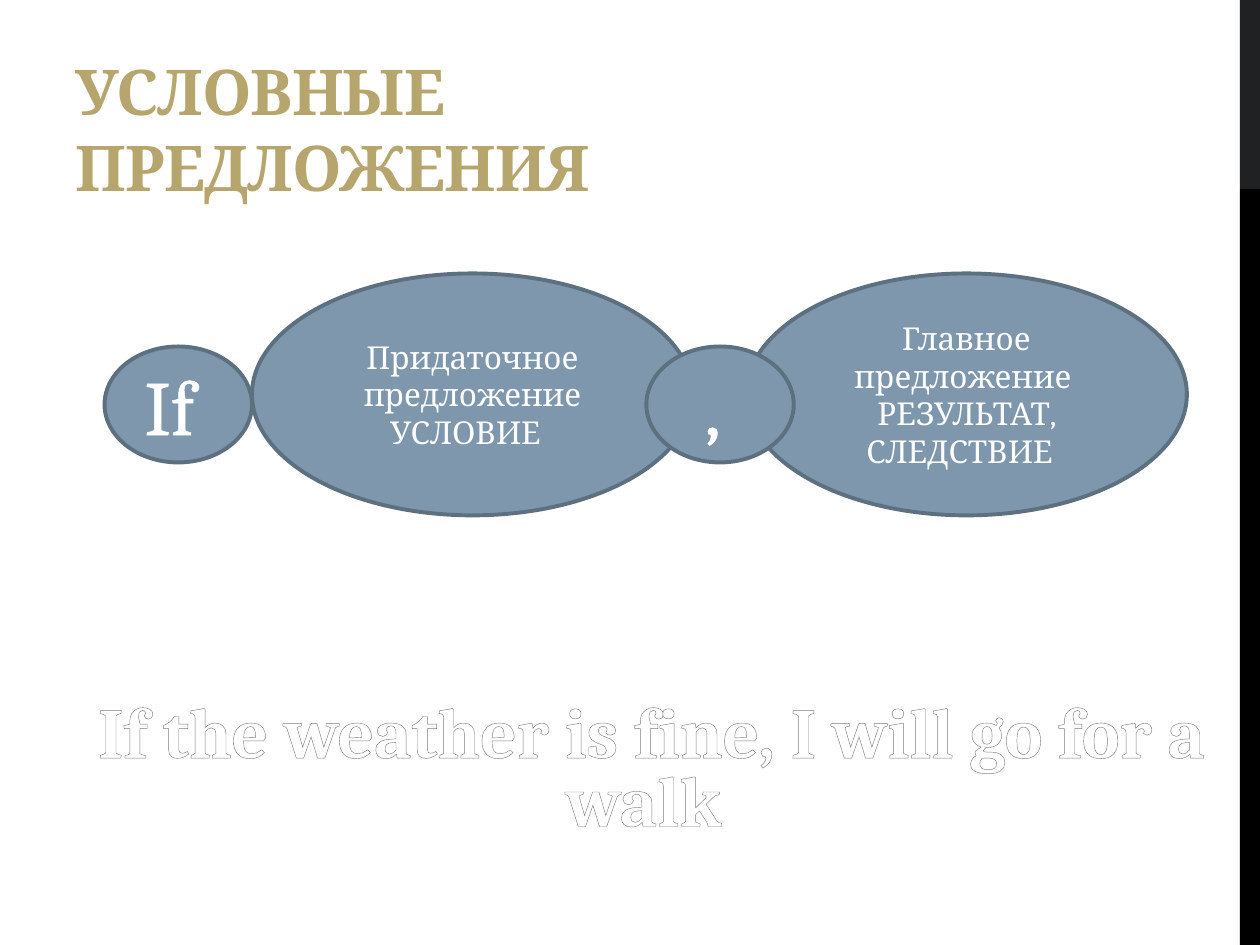
import pptx
import pptx.dml.color
import pptx.enum.shapes
import pptx.enum.text
import pptx.oxml
import pptx.oxml.ns
import pptx.util
from pptx.util import Inches

RGBColor = pptx.dml.color.RGBColor
Align = pptx.enum.text.PP_ALIGN
Anchor = pptx.enum.text.MSO_ANCHOR
Shape = pptx.enum.shapes.MSO_SHAPE

WHITE = RGBColor(0xFF, 0xFF, 0xFF)
BLACK = RGBColor(0x00, 0x00, 0x00)
CHARCOAL = RGBColor(0x1F, 0x21, 0x23)
BLUE = RGBColor(0x7E, 0x97, 0xAD)
DARK_BLUE = RGBColor(0x5D, 0x70, 0x80)
GRAY = RGBColor(0x7F, 0x7F, 0x7F)
OUTLINE_GRAY = RGBColor(0x7D, 0x7D, 0x7D)
GOLD_STOPS = [
    (0, RGBColor(0x59, 0x4F, 0x2C)),
    (78, RGBColor(0xB6, 0xA5, 0x6D)),
    (100, RGBColor(0xF8, 0xF6, 0xF1)),
]
SILVER_STOPS = [(0, WHITE), (9, WHITE), (50, GRAY), (79, WHITE), (100, WHITE)]


class SlideBuilder:
    font = "Cambria"

    def __init__(self, slide):
        self.s = slide

    def bar(self, top, height, color):
        sp = self.s.shapes.add_shape(
            Shape.RECTANGLE, Inches(9.84), Inches(top), Inches(0.16), Inches(height)
        )
        sp.shadow.inherit = False
        sp.fill.solid()
        sp.fill.fore_color.rgb = color
        sp.line.fill.background()

    def ellipse(self, left, top, width, height, lines, size, outline=None):
        sp = self.s.shapes.add_shape(
            Shape.OVAL, Inches(left), Inches(top), Inches(width), Inches(height)
        )
        sp.shadow.inherit = False
        sp.fill.solid()
        sp.fill.fore_color.rgb = BLUE
        sp.line.color.rgb = DARK_BLUE
        sp.line.width = pptx.util.Pt(2.25)
        tf = sp.text_frame
        tf.word_wrap = True
        tf.vertical_anchor = Anchor.MIDDLE
        for i, line in enumerate(lines):
            p = tf.add_paragraph() if i else tf.paragraphs[0]
            p.alignment = Align.CENTER
            r = self.run(p, line, size)
            r.font.color.rgb = WHITE
            if outline:
                self.outline(r, *outline)

    def heading(self, left, top, width, height, text, size, stops, anchor, align):
        sp = self.s.shapes.add_textbox(
            Inches(left), Inches(top), Inches(width), Inches(height)
        )
        tf = sp.text_frame
        tf.word_wrap = True
        tf.vertical_anchor = anchor
        p = tf.paragraphs[0]
        p.alignment = align
        r = self.run(p, text, size)
        r.font.bold = True
        self.gradient(r, stops)
        return p, r

    def run(self, p, text, size):
        r = p.add_run()
        r.text = text
        r.font.name = self.font
        r.font.size = pptx.util.Pt(size)
        return r

    def gradient(self, r, stops):
        gs = "".join(
            f'<a:gs pos="{pos * 1000}"><a:srgbClr val="{color}"/></a:gs>'
            for pos, color in stops
        )
        self.insert(
            r,
            f'<a:gradFill {pptx.oxml.ns.nsdecls("a")}><a:gsLst>{gs}</a:gsLst>'
            '<a:lin ang="5400000" scaled="0"/></a:gradFill>',
        )

    def outline(self, r, color, width):
        self.insert(
            r,
            f'<a:ln {pptx.oxml.ns.nsdecls("a")} w="{pptx.util.Pt(width)}">'
            f'<a:solidFill><a:srgbClr val="{color}"/></a:solidFill></a:ln>',
        )

    def insert(self, r, xml):
        r.font._element.insert(0, pptx.oxml.parse_xml(xml))


def main():
    prs = pptx.Presentation()
    prs.slide_width = Inches(10)
    prs.slide_height = Inches(7.5)
    sb = SlideBuilder(prs.slides.add_slide(prs.slide_layouts[6]))

    sb.bar(0, 1.5, CHARCOAL)
    sb.bar(1.5, 6, BLACK)

    p, r = sb.heading(0.5, 0.17, 6.33, 1.5, "УСЛОВНЫЕ ПРЕДЛОЖЕНИЯ", 36,
                      GOLD_STOPS, Anchor.BOTTOM, Align.LEFT)
    r.font._element.set("spc", "-60")

    clauses = [
        (2, ["Придаточное предложение", "УСЛОВИЕ  "]),
        (5.92, ["Главное предложение ", "РЕЗУЛЬТАТ, СЛЕДСТВИЕ  "]),
    ]
    for left, lines in clauses:
        sb.ellipse(left, 2.17, 3.5, 1.92, lines, 18)
    for left, text in [(0.83, "If "), (5.13, ", ")]:
        sb.ellipse(left, 2.75, 1.17, 0.92, [text], 44, (WHITE, 1.45))

    p, r = sb.heading(0.67, 5.5, 9, 1.25,
                      "If the weather is fine, I will go for a walk ", 40.7,
                      SILVER_STOPS, Anchor.MIDDLE, Align.CENTER)
    p.line_spacing = 0.8
    sb.outline(r, OUTLINE_GRAY, 0.83)

    prs.save("out.pptx")


if __name__ == "__main__":
    main()
